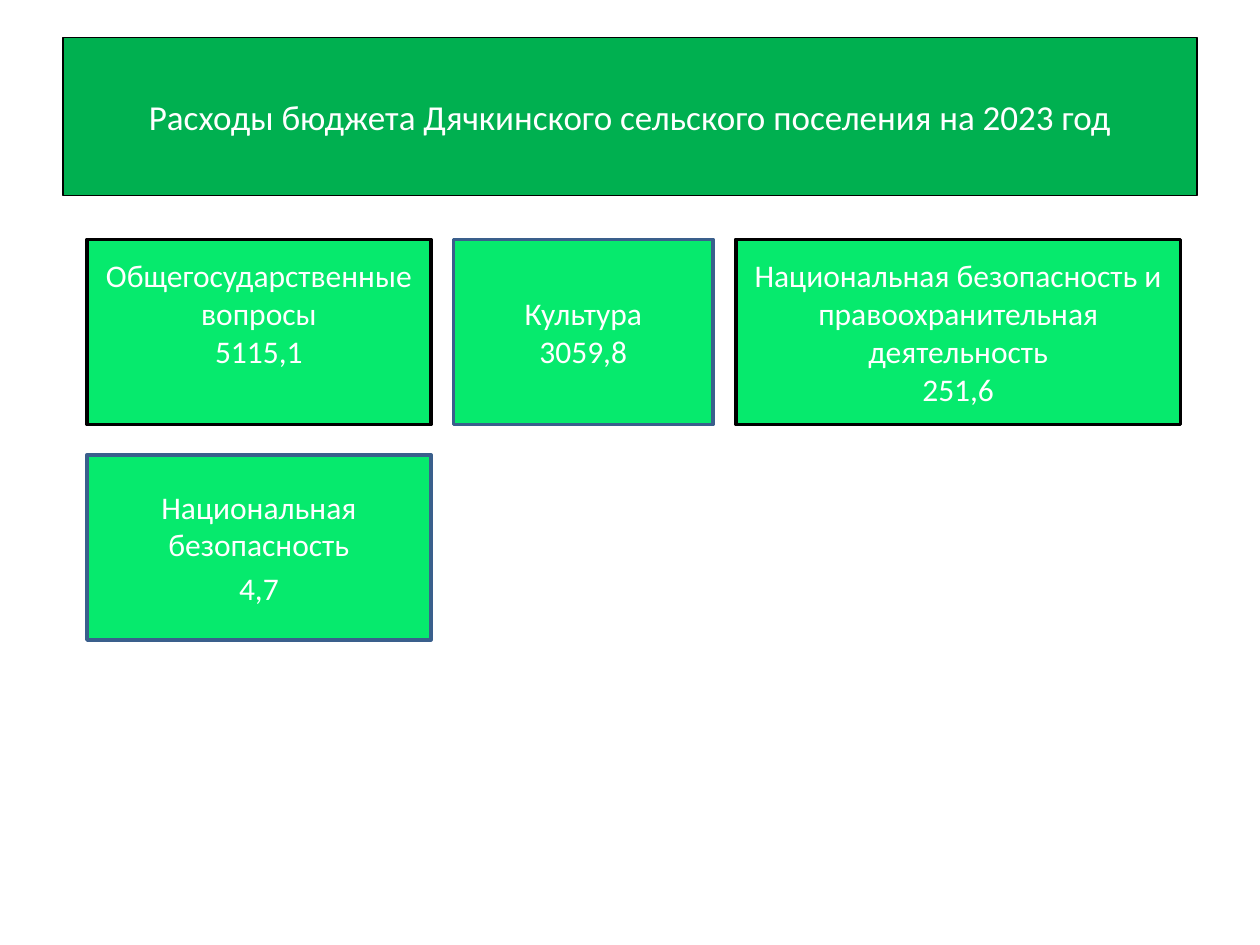
from pptx import Presentation
from pptx.dml.color import RGBColor
from pptx.enum.shapes import MSO_SHAPE
from pptx.enum.text import MSO_ANCHOR, PP_ALIGN
from pptx.util import Inches, Pt

GREEN = RGBColor(0x00, 0xB0, 0x50)
LIME = RGBColor(0x06, 0xEA, 0x6D)
BLUE = RGBColor(0x3A, 0x5F, 0x8C)
BLACK = RGBColor(0, 0, 0)
WHITE = RGBColor(255, 255, 255)

# Card grid, in inches
LEFT, TOP = 0.69, 1.9
HIGH = 1.47
GAP, STEP = 0.18, 1.71


class Deck:
    """Holds the text style and the current slide."""

    font = "Calibri"

    def __init__(self, wide, high):
        self.prs = Presentation()
        self.prs.slide_width = Inches(wide)
        self.prs.slide_height = Inches(high)
        self.slide = self.prs.slides.add_slide(self.prs.slide_layouts[5])

    def dress(self, shape, fill, line, weight, lines, size, lead=0):
        shape.fill.solid()
        shape.fill.fore_color.rgb = fill
        shape.line.color.rgb = line
        shape.line.width = Pt(weight)
        frame = shape.text_frame
        frame.word_wrap = True
        frame.vertical_anchor = MSO_ANCHOR.MIDDLE
        frame.text = "\n".join(lines)
        for para in frame.paragraphs:
            para.alignment = PP_ALIGN.CENTER
            para.space_before = Pt(lead)
            para.font.name = self.font
            para.font.size = Pt(size)
            para.font.color.rgb = WHITE

    def title(self, text, x, y, w, h):
        shape = self.slide.shapes.title
        shape.left, shape.top = Inches(x), Inches(y)
        shape.width, shape.height = Inches(w), Inches(h)
        self.dress(shape, GREEN, BLACK, 0.75, [text], 20)

    def card(self, lines, x, y, w, line, lead=0, foot=0.05):
        shape = self.slide.shapes.add_shape(
            MSO_SHAPE.RECTANGLE, Inches(x), Inches(y), Inches(w), Inches(HIGH))
        shape.shadow.inherit = False
        shape.text_frame.margin_bottom = Inches(foot)
        self.dress(shape, LIME, line, 2, lines, 18, lead)


def main():
    deck = Deck(10, 7.5)
    deck.title("Расходы бюджета Дячкинского сельского поселения на 2023 год",
               0.5, 0.3, 9, 1.25)

    # First row: name, sum, width, outline, bottom margin
    cards = [
        ("Общегосударственные вопросы", "5115,1", 2.73, BLACK, 0.35),
        ("Культура", "3059,8", 2.06, BLUE, 0.05),
        ("Национальная безопасность и правоохранительная деятельность",
         "251,6", 3.53, BLACK, 0.05),
    ]
    x = LEFT
    for name, total, wide, line, foot in cards:
        deck.card([name, total], x, TOP, wide, line, foot=foot)
        x += wide + GAP

    # Second row, as wide as the first card
    deck.card(["Национальная безопасность", "4,7"],
              LEFT, TOP + STEP, cards[0][2], BLUE, lead=3.6)

    deck.prs.save("out.pptx")


if __name__ == "__main__":
    main()
